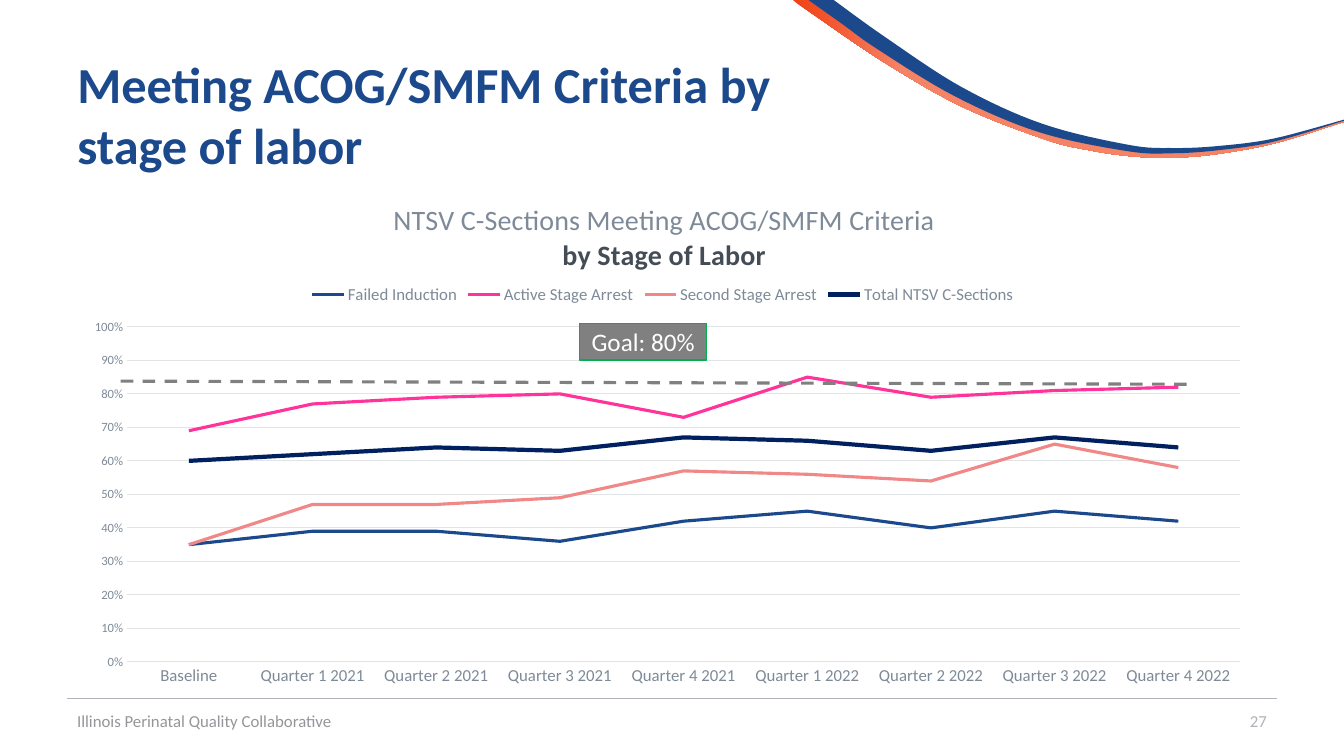
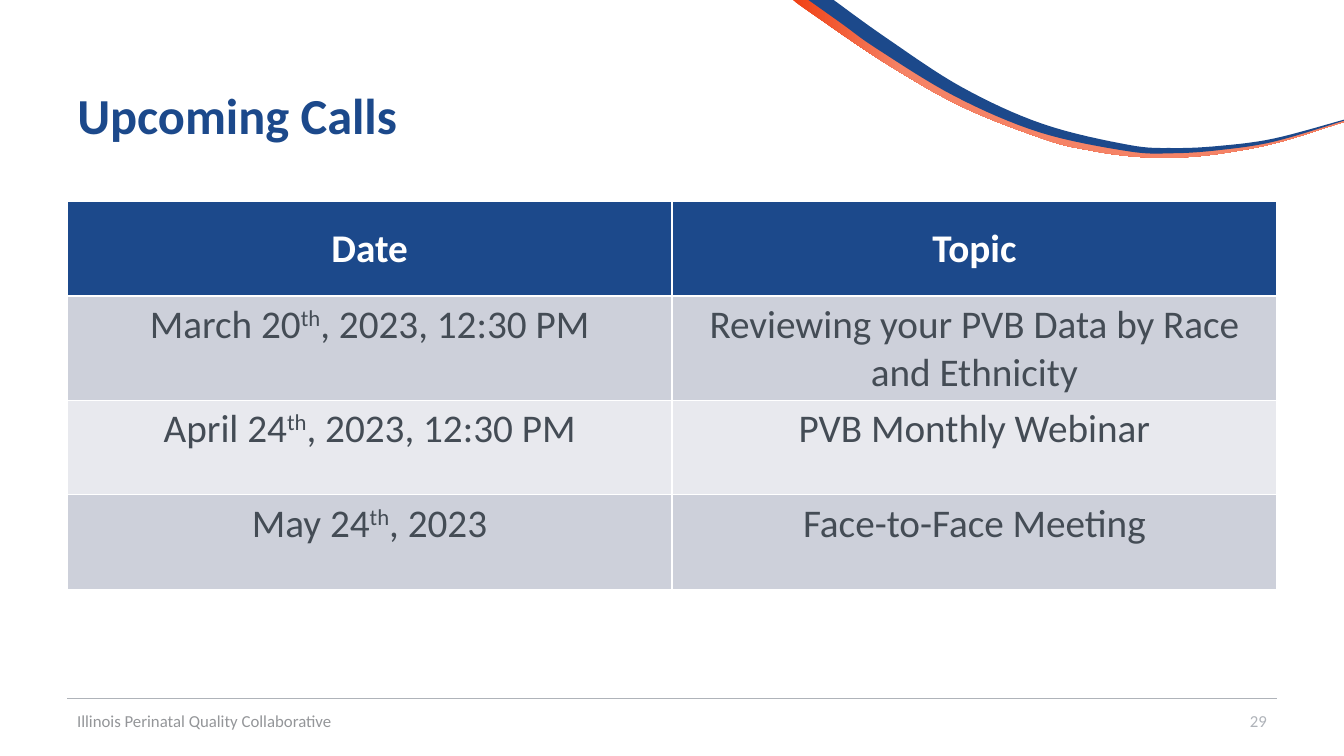
from dataclasses import dataclass

from lxml.etree import SubElement
from pptx import Presentation
from pptx.chart.data import CategoryChartData
from pptx.dml.color import RGBColor
from pptx.enum.chart import XL_CHART_TYPE, XL_LEGEND_POSITION, XL_TICK_MARK
from pptx.enum.dml import MSO_LINE
from pptx.enum.shapes import MSO_CONNECTOR, MSO_SHAPE
from pptx.enum.text import MSO_ANCHOR, MSO_AUTO_SIZE, PP_ALIGN
from pptx.oxml.ns import qn
from pptx.oxml.xmlchemy import OxmlElement
from pptx.util import Pt

PX = 9525  # EMU per px, 96 px to the inch


@dataclass(frozen=True)
class Theme:
    font: str = "Calibri"
    blue: str = "1C498B"
    navy: str = "002060"
    pink: str = "FF3399"
    salmon: str = "F08888"
    orange: str = "F04115"
    light_orange: str = "F58366"
    green: str = "00B050"
    white: str = "FFFFFF"
    text: str = "444C55"
    chart_text: str = "7E8A98"
    grid: str = "E1E4E7"
    rule: str = "AFB3B9"
    footer: str = "949699"
    goal: str = "808080"
    band_dark: str = "CDD0DA"
    band_light: str = "E8E9EE"
    title_size: int = 36
    table_size: int = 28
    chart_title_size: int = 20
    goal_size: int = 18
    label_size: int = 12
    axis_size: int = 9


theme = Theme()


def style_font(font, size, color, bold=False):
    font.name = theme.font
    font.size = Pt(size)
    font.bold = bold
    font.color.rgb = RGBColor.from_string(color)


def add_line(page, x1, y1, x2, y2, color, width):
    line = page.shapes.add_connector(
        MSO_CONNECTOR.STRAIGHT, x1 * PX, y1 * PX, x2 * PX, y2 * PX)
    line.line.color.rgb = RGBColor.from_string(color)
    line.line.width = Pt(width)
    SubElement(line._element.spPr, qn("a:effectLst"))
    return line


deck = Presentation()
deck.slide_width, deck.slide_height = 1280 * PX, 720 * PX
layout = deck.slide_layouts[5]

# Title position, shared through the layout
layout_title = layout.placeholders[0]
layout_title.left, layout_title.top = 64 * PX, 39 * PX
layout_title.width, layout_title.height = 1152 * PX, 139 * PX

# Pages with title, footer and number
pages = []
for title, number in (("Meeting ACOG/SMFM Criteria by\vstage of labor", 27),
                      ("Upcoming Calls", 29)):
    page = deck.slides.add_slide(layout)
    pages.append(page)
    frame = page.shapes.title.text_frame
    frame.text = title
    frame.auto_size = MSO_AUTO_SIZE.NONE
    frame.vertical_anchor = MSO_ANCHOR.MIDDLE
    frame.paragraphs[0].alignment = PP_ALIGN.LEFT
    for span in frame.paragraphs[0].runs:
        style_font(span.font, theme.title_size, theme.blue, True)
    for left, width, text, color, align in (
            (64, 432, "Illinois Perinatal Quality Collaborative",
             theme.footer, PP_ALIGN.LEFT),
            (928, 288, str(number), theme.rule, PP_ALIGN.RIGHT)):
        box = page.shapes.add_textbox(left * PX, 667 * PX, width * PX, 38 * PX)
        frame = box.text_frame
        frame.word_wrap = True
        frame.vertical_anchor = MSO_ANCHOR.MIDDLE
        frame.text = text
        para = frame.paragraphs[0]
        para.alignment = align
        style_font(para.runs[0].font, theme.label_size, color)
chart_page, calls_page = pages

# Swoosh edges: smooth curves through a few knots
edges = []
for knots in (
        [(794, 0), (844, 36), (916, 83), (993, 118), (1075, 138), (1118, 141),
         (1161, 139), (1213, 132), (1280, 114)],
        [(770, 0), (801, 22), (836, 47), (910, 92), (990, 126), (1074, 144),
         (1117, 146), (1161, 143), (1213, 135), (1280, 115)],
        [(755, 0), (772, 12), (843, 60), (917, 102), (996, 133), (1037, 143),
         (1079, 149), (1122, 150), (1164, 146), (1216, 136), (1280, 116)]):
    padded = [knots[0], *knots, knots[-1]]
    edge = []
    for a, b, c, d in zip(padded, padded[1:], padded[2:], padded[3:]):
        for step in range(8):
            t = step / 8
            edge.append(tuple(
                PX * (q + t * (r - p) / 2
                      + t * t * (2 * p - 5 * q + 4 * r - s) / 2
                      + t ** 3 * (3 * q - p - 3 * r + s) / 2)
                for p, q, r, s in zip(a, b, c, d)))
    edge.append(tuple(PX * value for value in knots[-1]))
    edges.append(edge)

# Swoosh bands and footer rule, moved to the layout
bands = []
for upper, lower in ((edges[1], edges[2]), (edges[0], edges[1])):
    builder = chart_page.shapes.build_freeform(*upper[0], scale=1.0)
    builder.add_line_segments(upper[1:] + lower[::-1], close=True)
    band = builder.convert_to_shape()
    band.shadow.inherit = False
    band.line.fill.background()
    bands.append(band)
orange_band, blue_band = bands
orange_band.fill.gradient()
orange_band.fill.gradient_angle = 0
for stop, position, color in zip(orange_band.fill.gradient_stops, (0, 0.2),
                                 (theme.orange, theme.light_orange)):
    stop.position = position
    stop.color.rgb = RGBColor.from_string(color)
blue_band.fill.solid()
blue_band.fill.fore_color.rgb = RGBColor.from_string(theme.blue)
footer_rule = add_line(chart_page, 64, 665, 1216, 665, theme.rule, 0.5)
for shape in (*bands, footer_rule):
    layout.shapes._spTree.append(shape._element)

# Line chart
data = CategoryChartData(number_format="0%")
data.categories = ["Baseline"] + [
    f"Quarter {quarter} {year}" for year in (2021, 2022) for quarter in range(1, 5)]
series_rows = (
    ("Failed Induction", theme.blue, 2.25,
     (0.35, 0.39, 0.39, 0.36, 0.42, 0.45, 0.4, 0.45, 0.42)),
    ("Active Stage Arrest", theme.pink, 2.25,
     (0.69, 0.77, 0.79, 0.8, 0.73, 0.85, 0.79, 0.81, 0.82)),
    ("Second Stage Arrest", theme.salmon, 2.25,
     (0.35, 0.47, 0.47, 0.49, 0.57, 0.56, 0.54, 0.65, 0.58)),
    ("Total NTSV C-Sections", theme.navy, 3,
     (0.6, 0.62, 0.64, 0.63, 0.67, 0.66, 0.63, 0.67, 0.64)))
for name, color, width, values in series_rows:
    data.add_series(name, values)
chart = chart_page.shapes.add_chart(
    XL_CHART_TYPE.LINE, 64 * PX, 169 * PX, 1140 * PX, 491 * PX, data).chart
style_font(chart.font, theme.label_size, theme.chart_text)
chart.plots[0].vary_by_categories = False
for series, (name, color, width, values) in zip(chart.plots[0].series, series_rows):
    series.smooth = False
    series.format.line.color.rgb = RGBColor.from_string(color)
    series.format.line.width = Pt(width)

# Chart title, legend and axes
title_frame = chart.chart_title.text_frame
title_frame.text = "NTSV C-Sections Meeting ACOG/SMFM Criteria\nby Stage of Labor"
for para, color, bold in zip(title_frame.paragraphs,
                             (theme.chart_text, theme.text), (False, True)):
    style_font(para.runs[0].font, theme.chart_title_size, color, bold)
chart.has_legend = True
chart.legend.position = XL_LEGEND_POSITION.TOP
chart.legend.include_in_layout = False
style_font(chart.legend.font, theme.label_size, theme.chart_text)
for axis, size in ((chart.category_axis, theme.label_size),
                   (chart.value_axis, theme.axis_size)):
    axis.major_tick_mark = axis.minor_tick_mark = XL_TICK_MARK.NONE
    style_font(axis.tick_labels.font, size, theme.chart_text)
value_axis = chart.value_axis
value_axis.minimum_scale, value_axis.maximum_scale = 0, 1
value_axis.major_unit = 0.1
value_axis.tick_labels.number_format = "0%"
value_axis.tick_labels.number_format_is_linked = False
value_axis.format.line.fill.background()
for line in (chart.category_axis.format.line, value_axis.major_gridlines.format.line):
    line.color.rgb = RGBColor.from_string(theme.grid)
    line.width = Pt(0.75)

# Fixed places inside the chart, as shares of its size
plot_area = chart._chartSpace.chart.plotArea
for parent, index, places in (
        (chart.chart_title._element, 1, {"x": 0.27, "y": 0.04}),
        (chart.legend._element, 1, {"x": 0.2, "y": 0.2}),
        (plot_area, 0, {"x": 0.05, "y": 0.29, "w": 0.93, "h": 0.65})):
    for old in parent.findall(qn("c:layout")):
        parent.remove(old)
    place = OxmlElement("c:layout")
    manual = SubElement(place, qn("c:manualLayout"))
    if parent is plot_area:
        SubElement(manual, qn("c:layoutTarget"), val="inner")
    for key in ("x", "y"):
        SubElement(manual, qn(f"c:{key}Mode"), val="edge")
    for key, share in places.items():
        SubElement(manual, qn(f"c:{key}"), val=str(share))
    parent.insert(index, place)

# Goal line and label
goal_line = add_line(chart_page, 115, 363, 1138, 366, theme.goal, 2.25)
goal_line.line.dash_style = MSO_LINE.DASH
goal_box = chart_page.shapes.add_shape(
    MSO_SHAPE.RECTANGLE, 552 * PX, 308 * PX, 121 * PX, 35 * PX)
goal_box.shadow.inherit = False
goal_box.fill.solid()
goal_box.fill.fore_color.rgb = RGBColor.from_string(theme.goal)
goal_box.line.color.rgb = RGBColor.from_string(theme.green)
goal_box.line.width = Pt(1)
frame = goal_box.text_frame
frame.word_wrap = False
frame.vertical_anchor = MSO_ANCHOR.MIDDLE
frame.text = "Goal: 80%"
frame.paragraphs[0].alignment = PP_ALIGN.CENTER
style_font(frame.paragraphs[0].runs[0].font, theme.goal_size, theme.white)

# Table of calls: each cell is a tuple of runs
call_rows = (
    (("Date",), ("Topic",)),
    (("March 20", "th", ", 2023, 12:30 PM"),
     ("Reviewing your PVB Data by Race and Ethnicity",)),
    (("April 24", "th", ", 2023, 12:30 PM"), ("PVB Monthly Webinar",)),
    (("May 24", "th", ", 2023"), ("Face-to-Face Meeting",)))
table = calls_page.shapes.add_table(
    len(call_rows), 2, 64 * PX, 192 * PX, 1152 * PX, 360 * PX).table
for row_index, call_row in enumerate(call_rows):
    table.rows[row_index].height = 90 * PX
    is_header = row_index == 0
    if is_header:
        fill_color, text_color = theme.blue, theme.white
    else:
        fill_color = theme.band_dark if row_index % 2 else theme.band_light
        text_color = theme.text
    for column_index, texts in enumerate(call_row):
        cell = table.cell(row_index, column_index)
        cell.fill.solid()
        cell.fill.fore_color.rgb = RGBColor.from_string(fill_color)
        cell.vertical_anchor = MSO_ANCHOR.MIDDLE if is_header else MSO_ANCHOR.TOP
        para = cell.text_frame.paragraphs[0]
        para.alignment = PP_ALIGN.CENTER
        for text in texts:
            span = para.add_run()
            span.text = text
            style_font(span.font, theme.table_size, text_color, is_header)
            if text == "th":
                span._r.get_or_add_rPr().set("baseline", "30000")

deck.save("out.pptx")
